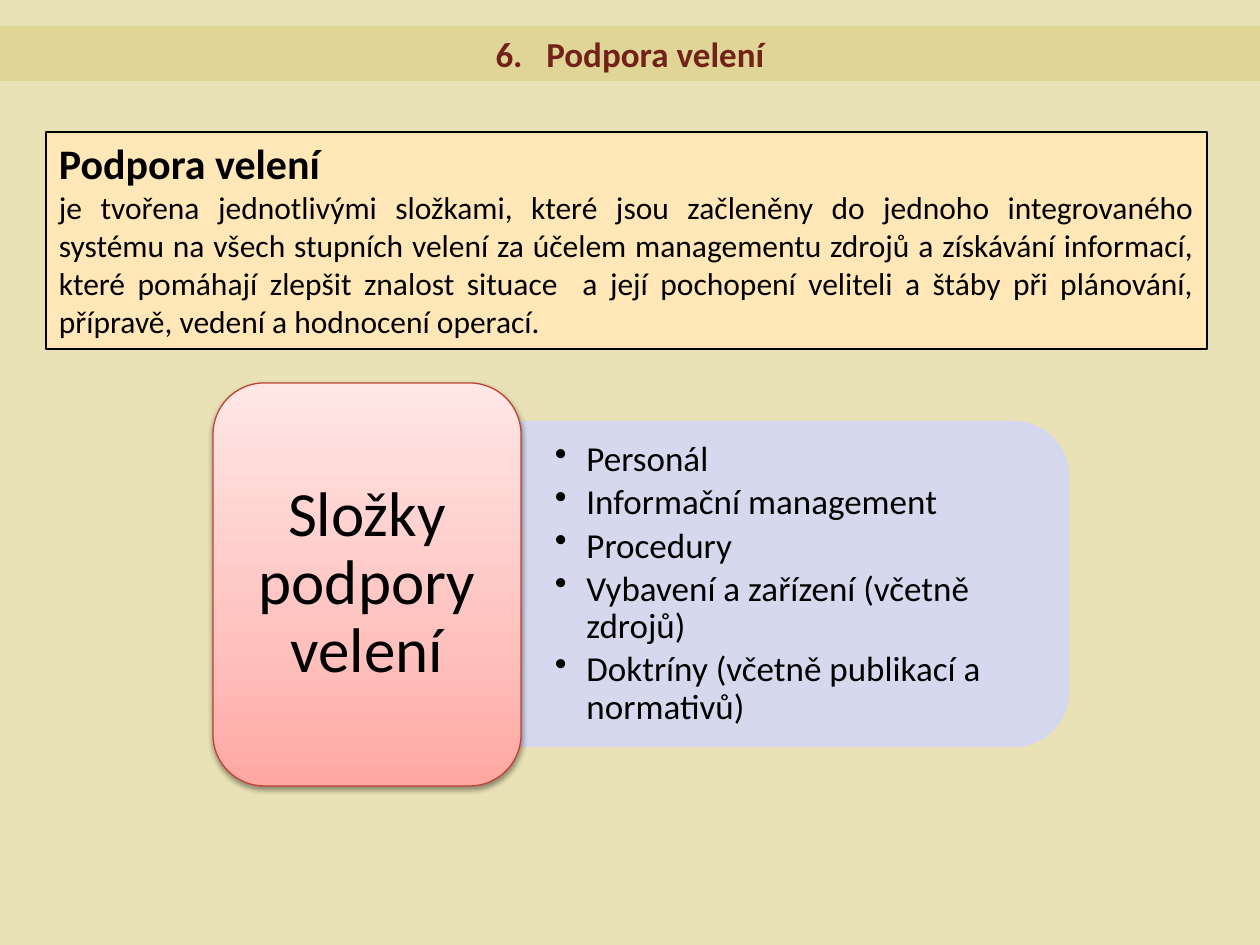
import copy
from dataclasses import dataclass
from typing import Optional

import pptx
import pptx.dml.color
import pptx.enum.shapes
import pptx.enum.text
import pptx.oxml
import pptx.oxml.ns
import pptx.util
from lxml import etree

EMU_PER_PX = 914400 / 126
SHAPE = pptx.enum.shapes.MSO_SHAPE
ALIGN = pptx.enum.text.PP_ALIGN
ANCHOR = pptx.enum.text.MSO_ANCHOR
qn = pptx.oxml.ns.qn


@dataclass(frozen=True)
class Theme:
    font: str = "Calibri"
    background: str = "E9E2B6"
    band: str = "DFD596"
    title: str = "722219"
    text: str = "000000"
    definition: str = "FFE7B8"
    items: str = "D5D7F3"
    items_opacity: int = 90
    label_line: str = "C04335"
    label_stops: tuple = ((0, "FFA7A3"), (0.35, "FFC1BE"), (1, "FFE7E6"))
    title_size: int = 20
    heading_size: int = 24
    body_size: int = 18
    item_size: int = 20
    label_size: int = 36


THEME = Theme()


@dataclass(frozen=True)
class Box:
    left: int
    top: int
    width: int
    height: int


@dataclass(frozen=True)
class Panel:
    box: Box
    kind: SHAPE
    fill: Optional[str] = None
    line: Optional[str] = None
    line_width: float = 0.75
    rotation: int = 0


@dataclass(frozen=True)
class Line:
    text: str
    size: int
    color: str = THEME.text
    bold: bool = False
    align: ALIGN = ALIGN.LEFT
    spacing: Optional[float] = None
    after: int = 0
    bullet: bool = False


TITLE_BAND = Panel(Box(0, 26, 1260, 55), SHAPE.RECTANGLE, THEME.band)
TITLE = [Line("6.   Podpora velení", THEME.title_size, THEME.title, True, ALIGN.CENTER)]

DEFINITION_PANEL = Panel(Box(46, 132, 1161, 217), SHAPE.RECTANGLE, THEME.definition, THEME.text)
DEFINITION = [
    Line("Podpora velení", THEME.heading_size, bold=True),
    Line(
        "je tvořena jednotlivými složkami, které jsou začleněny do jednoho "
        "integrovaného systému na všech stupních velení za účelem managementu "
        "zdrojů a získávání informací, které pomáhají zlepšit znalost situace  "
        "a její pochopení veliteli a štáby při plánování, přípravě, vedení a "
        "hodnocení operací.",
        THEME.body_size,
        align=ALIGN.JUSTIFY,
    ),
]

ITEMS_PANEL = Panel(
    Box(633, 311, 323, 546), SHAPE.ROUND_2_SAME_RECTANGLE, THEME.items, THEME.items, 2, 90
)
ITEMS_BOX = Box(521, 439, 530, 291)
ITEMS = [
    Line(text, THEME.item_size, spacing=0.9, after=3, bullet=True)
    for text in (
        "Personál",
        "Informační management",
        "Procedury",
        "Vybavení a zařízení (včetně zdrojů)",
        "Doktríny (včetně publikací a normativů)",
    )
]

LABEL_PANEL = Panel(Box(213, 383, 308, 403), SHAPE.ROUNDED_RECTANGLE, line=THEME.label_line)
LABEL_BOX = Box(228, 398, 278, 373)
LABEL = [Line("Složky podpory velení", THEME.label_size, align=ALIGN.CENTER, spacing=0.9)]


def px(length: int) -> int:
    return round(length * EMU_PER_PX)


def place(box: Box) -> tuple:
    return px(box.left), px(box.top), px(box.width), px(box.height)


def rgb(color: str) -> pptx.dml.color.RGBColor:
    return pptx.dml.color.RGBColor.from_string(color)


def draw_panel(shapes, panel: Panel):
    shape = shapes.add_shape(panel.kind, *place(panel.box))
    shape.shadow.inherit = False
    shape.rotation = panel.rotation
    if panel.fill:
        shape.fill.solid()
        shape.fill.fore_color.rgb = rgb(panel.fill)
    if panel.line:
        shape.line.color.rgb = rgb(panel.line)
        shape.line.width = pptx.util.Pt(panel.line_width)
    else:
        shape.line.fill.background()
    return shape


def set_opacity(shape, percent: int) -> None:
    for color in shape._element.spPr.iter(qn("a:srgbClr")):
        etree.SubElement(color, qn("a:alpha"), val=str(percent * 1000))


def fill_gradient(shape, stops: tuple) -> None:
    shape.fill.gradient()
    shape.fill.gradient_angle = 90
    stop_list = next(shape._element.spPr.iter(qn("a:gsLst")))
    stop_list.append(copy.deepcopy(stop_list[-1]))
    for stop, (position, color) in zip(shape.fill.gradient_stops, stops):
        stop.position = position
        stop.color.rgb = rgb(color)


def add_shadow(shape) -> None:
    effects = shape._element.spPr.find(qn("a:effectLst"))
    shadow = etree.SubElement(
        effects, qn("a:outerShdw"), blurRad=str(pptx.util.Pt(3.1)),
        dist=str(pptx.util.Pt(1.6)), dir="5400000", rotWithShape="0",
    )
    color = etree.SubElement(shadow, qn("a:srgbClr"), val=THEME.text)
    etree.SubElement(color, qn("a:alpha"), val="38000")


def add_bullet(paragraph) -> None:
    properties = paragraph._p.get_or_add_pPr()
    indent = pptx.util.Inches(0.25)
    properties.set("marL", str(indent))
    properties.set("indent", str(-indent))
    etree.SubElement(properties, qn("a:buChar"), char="•")


def write(shape, lines: list, anchor: ANCHOR = ANCHOR.TOP, margins: tuple = (13, 6),
          grow: bool = False) -> None:
    frame = shape.text_frame
    frame.word_wrap = True
    frame.vertical_anchor = anchor
    frame.margin_left = frame.margin_right = px(margins[0])
    frame.margin_top = frame.margin_bottom = px(margins[1])
    if grow:
        frame.auto_size = pptx.enum.text.MSO_AUTO_SIZE.SHAPE_TO_FIT_TEXT
    for index, line in enumerate(lines):
        paragraph = frame.add_paragraph() if index else frame.paragraphs[0]
        paragraph.text = line.text
        paragraph.alignment = line.align
        if line.spacing:
            paragraph.line_spacing = line.spacing
        paragraph.space_after = pptx.util.Pt(line.after)
        if line.bullet:
            add_bullet(paragraph)
        paragraph.font.name = THEME.font
        paragraph.font.size = pptx.util.Pt(line.size)
        paragraph.font.bold = line.bold
        paragraph.font.color.rgb = rgb(line.color)


def main() -> None:
    presentation = pptx.Presentation()
    presentation.slide_width = px(1260)
    presentation.slide_height = px(945)
    slide = presentation.slides.add_slide(presentation.slide_layouts[6])
    slide.background.fill.solid()
    slide.background.fill.fore_color.rgb = rgb(THEME.background)

    write(draw_panel(slide.shapes, TITLE_BAND), TITLE, grow=True)
    write(draw_panel(slide.shapes, DEFINITION_PANEL), DEFINITION, grow=True)

    diagram = slide.shapes.add_group_shape().shapes
    set_opacity(draw_panel(diagram, ITEMS_PANEL), THEME.items_opacity)
    write(diagram.add_textbox(*place(ITEMS_BOX)), ITEMS, ANCHOR.MIDDLE, (34, 18))
    label = draw_panel(diagram, LABEL_PANEL)
    fill_gradient(label, THEME.label_stops)
    add_shadow(label)
    write(diagram.add_textbox(*place(LABEL_BOX)), LABEL, ANCHOR.MIDDLE, (19, 9))

    presentation.save("out.pptx")


if __name__ == "__main__":
    main()
